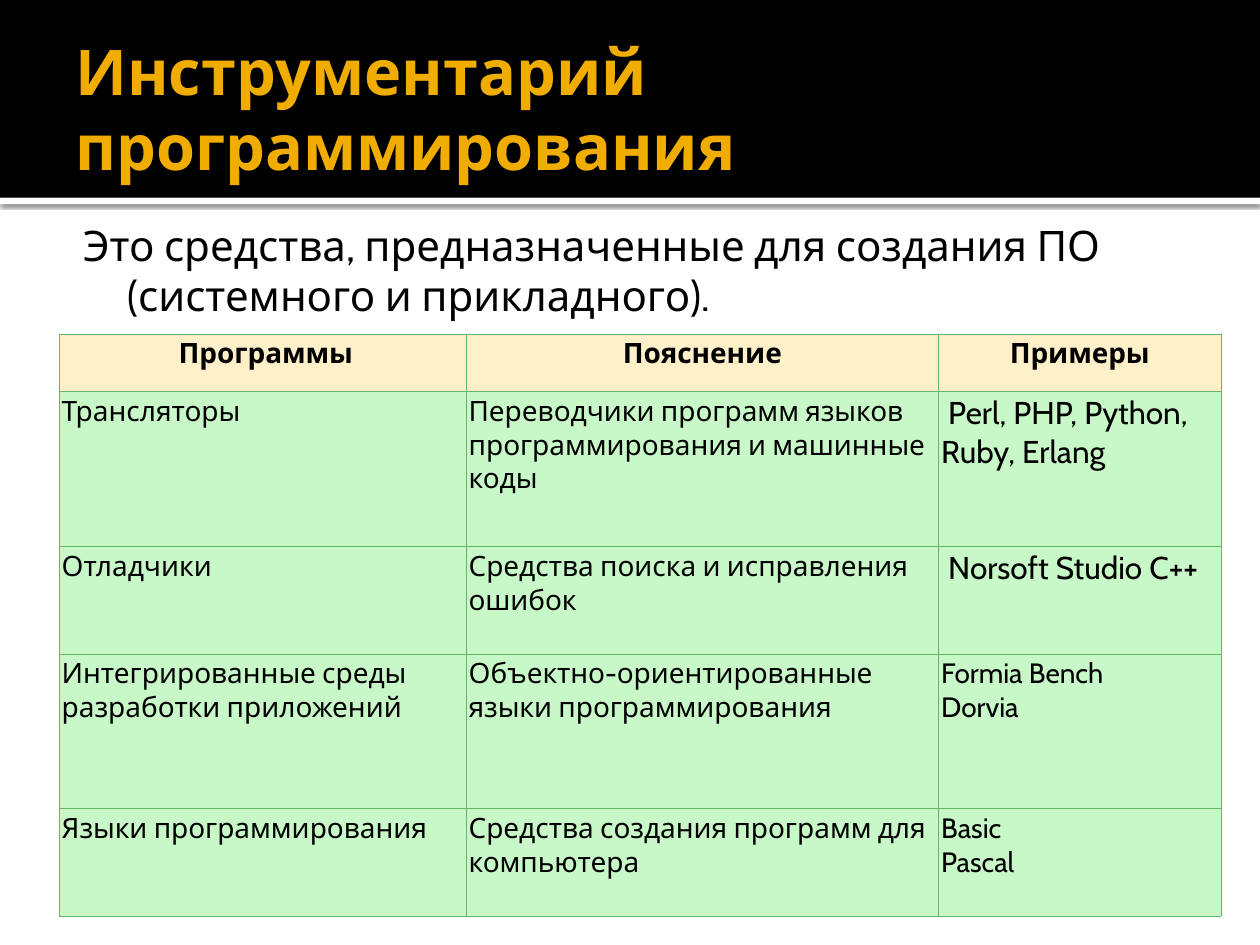
from dataclasses import dataclass

from lxml import etree
from pptx import Presentation
from pptx.dml.color import RGBColor
from pptx.enum import shapes, text
from pptx.oxml import ns, parse_xml
from pptx.util import Inches, Pt


@dataclass(frozen=True)
class Theme:
    font: str = "Cabin"
    black: str = "000000"
    white: str = "FFFFFF"
    gold: str = "F0AD00"
    cream: str = "FFF0C9"
    mint: str = "C8F7C8"
    green: str = "67B569"
    title: int = 36
    body: int = 24
    large: int = 18
    cell: int = 16


T = Theme()
HEAD = [" Программы", "Пояснение", "Примеры"]
# Each row: program, meaning, example lines, size of the examples
ROWS = [
    ("Трансляторы", "Переводчики программ языков программирования и машинные коды",
     [" Perl, PHP, Python, ", "Ruby, Erlang"], T.large),
    ("Отладчики", "Средства поиска и исправления ошибок",
     [" Norsoft Studio C++"], T.large),
    ("Интегрированные среды разработки приложений",
     "Объектно-ориентированные языки программирования",
     ["Formia Bench", "Dorvia"], T.cell),
    ("Языки программирования", "Средства создания программ для компьютера",
     ["Basic", "Pascal"], T.cell),
]
COLS = [3.23, 3.75, 2.24]
HIGH = [0.46, 1.23, 0.85, 1.23, 0.85]


def write(frame, lines, size=T.cell, color=T.black, bold=False, align=None, hang=None):
    """Fill a text frame with one paragraph per line."""
    frame.word_wrap = True
    for i, line in enumerate(lines):
        para = frame.paragraphs[0] if i == 0 else frame.add_paragraph()
        if align is not None:
            para.alignment = align
        if hang:
            props = para._p.get_or_add_pPr()
            props.set("marL", str(Inches(hang[0])))
            props.set("indent", str(Inches(hang[1])))
        run = para.add_run()
        run.text = line
        font = run.font
        font.name, font.size, font.bold = T.font, Pt(size), bold
        font.color.rgb = RGBColor.from_string(color)


def pad(item, left, top, right, low):
    item.margin_left, item.margin_top = Inches(left), Inches(top)
    item.margin_right, item.margin_bottom = Inches(right), Inches(low)


def bar(slide, x, y, w, h, color):
    rect = slide.shapes.add_shape(shapes.MSO_SHAPE.RECTANGLE,
                                  Inches(x), Inches(y), Inches(w), Inches(h))
    rect.shadow.inherit = False
    rect.fill.solid()
    rect.fill.fore_color.rgb = RGBColor.from_string(color)
    rect.line.fill.background()
    return rect


def shade(rect):
    """Give a bar a soft shadow straight below it."""
    effects = rect._element.spPr.find(ns.qn("a:effectLst"))
    effects.append(parse_xml(
        f'<a:outerShdw {ns.nsdecls("a")} blurRad="{Pt(2.5)}" dist="{Pt(0.8)}" '
        f'dir="5400000" algn="t" rotWithShape="0"><a:srgbClr val="{T.black}">'
        '<a:alpha val="60000"/></a:srgbClr></a:outerShdw>'))


def label(slide, x, y, w, h):
    box = slide.shapes.add_textbox(Inches(x), Inches(y), Inches(w), Inches(h))
    return box.text_frame


def banner(slide, x, y, w, h):
    # White rule with its shadow, then the black band
    shade(bar(slide, x, y + h, w, 0.05, T.white))
    bar(slide, x, y, w, h, T.black)
    frame = label(slide, x + 0.5, y + 0.17, w - 1, h - 0.2)
    pad(frame, 0.1, 0.05, 0.05, 0.05)
    frame.vertical_anchor = text.MSO_ANCHOR.MIDDLE
    write(frame, ["Инструментарий программирования"], T.title, T.gold, bold=True)


def intro(slide, x, y, w, h):
    frame = label(slide, x, y, w, h)
    pad(frame, 0.06, 0.1, 0.1, 0.05)
    write(frame, ["Это средства, предназначенные для создания ПО "
                  "(системного и прикладного)."], T.body, hang=(0.48, -0.35))


def edge(cell):
    """Draw a thin line on all four sides; lines go before the fill."""
    props = cell._tc.get_or_add_tcPr()
    for i, side in enumerate(("lnL", "lnR", "lnT", "lnB")):
        line = etree.Element(ns.qn(f"a:{side}"), w=str(Pt(0.5)))
        fill = etree.SubElement(line, ns.qn("a:solidFill"))
        etree.SubElement(fill, ns.qn("a:srgbClr"), val=T.green)
        props.insert(i, line)


def fill_cell(cell, color, lines, **style):
    pad(cell, 0.02, 0.02, 0.02, 0.02)
    cell.fill.solid()
    cell.fill.fore_color.rgb = RGBColor.from_string(color)
    edge(cell)
    write(cell.text_frame, lines, **style)


def tools(slide, x, y):
    grid = slide.shapes.add_table(len(HIGH), len(COLS), Inches(x), Inches(y),
                                  Inches(sum(COLS)), Inches(sum(HIGH))).table
    for col, w in zip(grid.columns, COLS):
        col.width = Inches(w)
    for row, h in zip(grid.rows, HIGH):
        row.height = Inches(h)
    # Header row
    for c, name in enumerate(HEAD):
        fill_cell(grid.cell(0, c), T.cream, [name], bold=True,
                  align=text.PP_ALIGN.CENTER)
    # Body rows
    for r, (name, note, items, size) in enumerate(ROWS, 1):
        fill_cell(grid.cell(r, 0), T.mint, [name])
        fill_cell(grid.cell(r, 1), T.mint, [note])
        fill_cell(grid.cell(r, 2), T.mint, items, size=size)


def main():
    deck = Presentation()
    deck.slide_width, deck.slide_height = Inches(10), Inches(7.5)
    slide = deck.slides.add_slide(deck.slide_layouts[6])
    banner(slide, 0, 0, 10, 1.57)
    intro(slide, 0.47, 1.64, 9, 0.94)
    tools(slide, 0.47, 2.65)
    deck.save("out.pptx")


if __name__ == "__main__":
    main()
